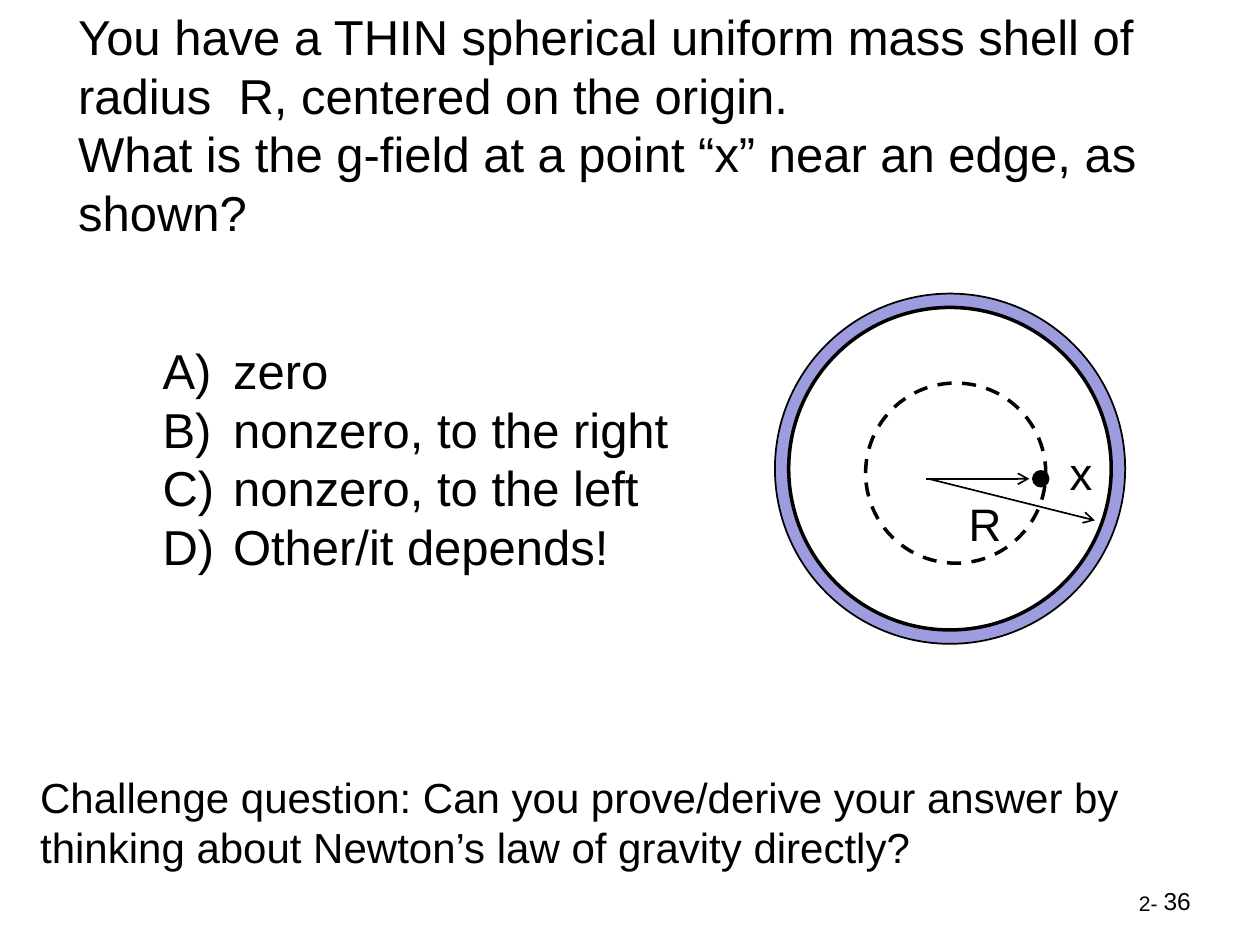
from lxml.etree import SubElement
from pptx import Presentation
from pptx.dml.color import RGBColor
from pptx.enum.dml import MSO_LINE_DASH_STYLE as Dash
from pptx.enum.shapes import MSO_CONNECTOR as Connector, MSO_SHAPE as Shape
from pptx.enum.text import MSO_ANCHOR as Anchor, MSO_AUTO_SIZE as AutoSize, PP_ALIGN as Align
from pptx.oxml.ns import qn
from pptx.util import Inches, Pt

COLORS = {"ink": "000000", "paper": "FFFFFF", "shell": "9C9CDF"}
FONT = "Arial"

QUESTION = [
    "You have a THIN spherical uniform mass shell of radius  R, centered on the origin.",
    "What is the g-field at a point “x” near an edge, as shown?",
]
ANSWERS = ["zero", "nonzero, to the right", "nonzero, to the left", "Other/it depends!"]
CHALLENGE = ("Challenge question: Can you prove/derive your answer by "
             "thinking about Newton’s law of gravity directly?")

LABELS = [
    ("2-", (8.94, 7.02, 0.48, 0.3), 12, Align.LEFT),
    ("36", (7.22, 6.98, 2.33, 0.52), 14, Align.RIGHT),
    ("R", (7.59, 3.89, 0.47, 0.54), 26, Align.LEFT),
    ("x", (8.39, 3.48, 0.38, 0.54), 26, Align.LEFT),
    (CHALLENGE, (0.22, 6.07, 9.11, 0.91), 24, Align.LEFT),
]
SHELL_CENTER = (7.54, 3.72)
CIRCLES = [
    (SHELL_CENTER, 2.78, "shell", 1, None),
    (SHELL_CENTER, 2.56, "paper", 2, None),
    ((8.26, 3.8), 0.11, "ink", 2, None),
    ((6.87 + 1.43 / 2, 3.04 + 1.43 / 2), 1.43, None, 2, Dash.DASH),
]
ARROWS = [((7.35, 3.8), (8.17, 3.8)), ((7.37, 3.8), (8.69, 4.13))]


def color(name):
    return RGBColor.from_string(COLORS[name])


def place(holder, box):
    holder.left, holder.top, holder.width, holder.height = map(Inches, box)


def write(holder, lines, size, align=Align.LEFT):
    frame = holder.text_frame
    frame.word_wrap = True
    frame.auto_size = AutoSize.NONE
    frame.vertical_anchor = Anchor.TOP
    for index, line in enumerate(lines):
        paragraph = frame.add_paragraph() if index else frame.paragraphs[0]
        paragraph.alignment = align
        paragraph.space_before = Pt(0)
        run = paragraph.add_run()
        run.text = line
        run.font.name = FONT
        run.font.size = Pt(size)
        run.font.color.rgb = color("ink")


def number_with_letters(holder, indent):
    for paragraph in holder.text_frame.paragraphs:
        props = paragraph._p.get_or_add_pPr()
        props.set("marL", str(Inches(indent)))
        props.set("indent", str(-Inches(indent)))
        SubElement(props, qn("a:buFont"), typeface=FONT)
        SubElement(props, qn("a:buAutoNum"), type="alphaUcParenR")


def add_circle(slide, center, diameter, fill, width, dash):
    left, top = (Inches(middle - diameter / 2) for middle in center)
    circle = slide.shapes.add_shape(Shape.OVAL, left, top, Inches(diameter), Inches(diameter))
    circle.shadow.inherit = False
    if fill:
        circle.fill.solid()
        circle.fill.fore_color.rgb = color(fill)
    else:
        circle.fill.background()
    circle.line.color.rgb = color("ink")
    circle.line.width = Pt(width)
    if dash:
        circle.line.dash_style = dash


def add_arrow(slide, start, end):
    arrow = slide.shapes.add_connector(Connector.STRAIGHT, *map(Inches, start + end))
    arrow.line.color.rgb = color("ink")
    arrow.line.width = Pt(1)
    SubElement(arrow.line._get_or_add_ln(), qn("a:tailEnd"), type="arrow")
    SubElement(arrow._element.spPr, qn("a:effectLst"))


def main():
    deck = Presentation()
    deck.slide_width, deck.slide_height = Inches(10), Inches(7.5)
    slide = deck.slides.add_slide(deck.slide_layouts[1])

    question, answers = slide.placeholders
    place(question, (0.52, 0, 8.93, 1.99))
    write(question, QUESTION, 28)
    place(answers, (1.19, 2.65, 4.5, 1.99))
    write(answers, ANSWERS, 28)
    number_with_letters(answers, 0.56)

    for circle in CIRCLES:
        add_circle(slide, *circle)
    for arrow in ARROWS:
        add_arrow(slide, *arrow)
    for text, box, size, align in LABELS:
        label = slide.shapes.add_textbox(*map(Inches, box))
        write(label, [text], size, align)

    deck.save("out.pptx")


if __name__ == "__main__":
    main()
